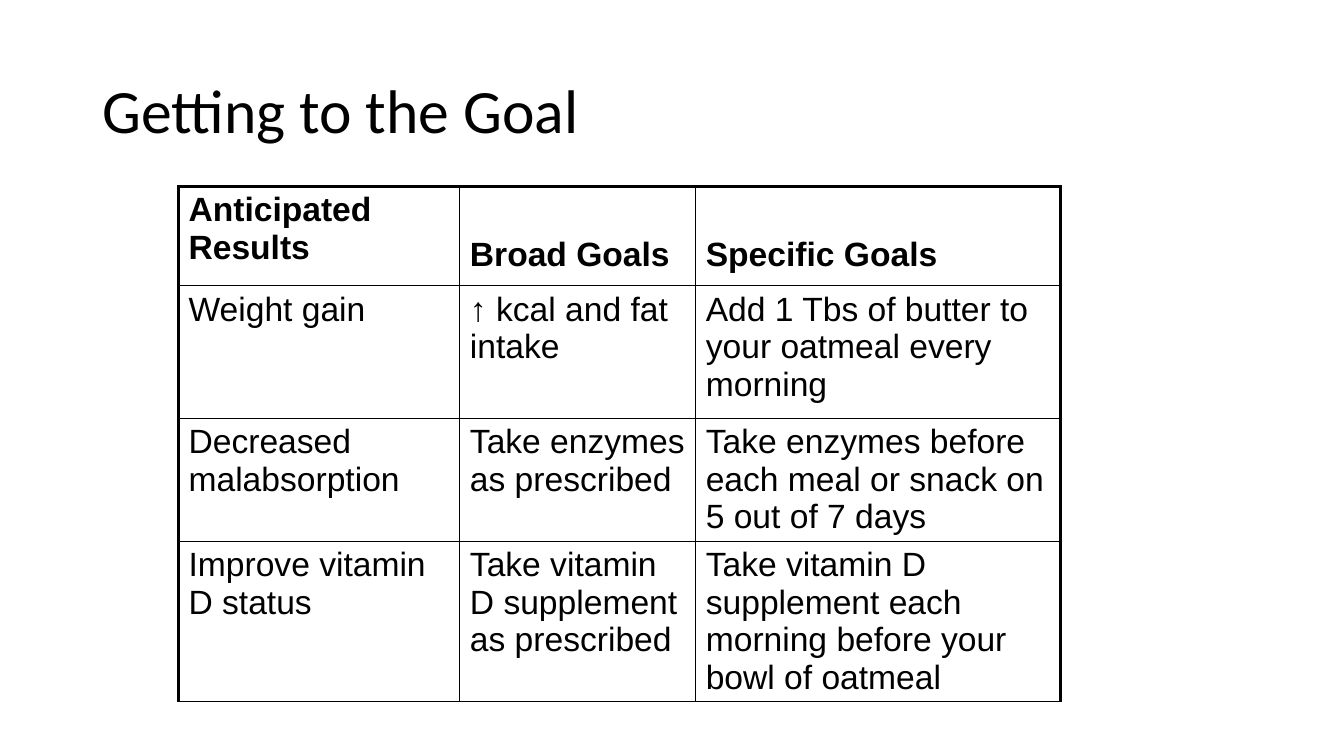
from lxml import etree
from pptx import Presentation
from pptx.dml.color import RGBColor
from pptx.enum.text import MSO_ANCHOR, MSO_AUTO_SIZE, PP_ALIGN
from pptx.oxml.ns import qn
from pptx.util import Pt

TOP, MIDDLE, BOTTOM = MSO_ANCHOR.TOP, MSO_ANCHOR.MIDDLE, MSO_ANCHOR.BOTTOM
LEFT = PP_ALIGN.LEFT
NO_AUTOFIT = MSO_AUTO_SIZE.NONE
TITLE_ONLY = 5

GOALS = [
    ["Anticipated Results", "Broad Goals", "Specific Goals"],
    ["Weight gain", "↑ kcal and fat intake",
     "Add 1 Tbs of butter to your oatmeal every morning"],
    ["Decreased malabsorption", "Take enzymes as prescribed",
     "Take enzymes before each meal or snack on 5 out of 7 days"],
    ["Improve vitamin D status", "Take vitamin D supplement as prescribed",
     "Take vitamin D supplement each morning before your bowl of oatmeal"],
]
COLUMN_WIDTHS = [201, 168.5, 260.5]
ROW_HEIGHTS = [71, 94.5, 88, 114.5]


def color(code):
    return RGBColor.from_string(code)


class GoalSlide:
    ink, paper = "000000", "FFFFFF"
    title_font, table_font = "Calibri", "Arial"
    thin, thick = 1, 2.25

    def __init__(self, slide):
        self.slide = slide

    def add_text(self, frame, text, font, size, bold=False):
        paragraph = frame.paragraphs[0]
        paragraph.alignment = LEFT
        run = paragraph.add_run()
        run.text = text
        run.font.name = font
        run.font.size = Pt(size)
        run.font.bold = bold
        run.font.color.rgb = color(self.ink)
        return paragraph

    def title(self, text, left, top, width, height):
        heading = self.slide.shapes.title
        heading.left, heading.top = Pt(left), Pt(top)
        heading.width, heading.height = Pt(width), Pt(height)
        frame = heading.text_frame
        frame.word_wrap = True
        frame.auto_size = NO_AUTOFIT
        frame.vertical_anchor = MIDDLE
        self.add_text(frame, text, self.title_font, 44).line_spacing = 0.9

    def border(self, cell, side, weight):
        properties = cell._tc.get_or_add_tcPr()
        line = etree.SubElement(properties, qn(f"a:ln{side}"), w=str(Pt(weight)))
        fill = etree.SubElement(line, qn("a:solidFill"))
        etree.SubElement(fill, qn("a:srgbClr"), val=self.ink)

    def table(self, rows, left, top, widths, heights):
        table = self.slide.shapes.add_table(
            len(rows), len(widths), Pt(left), Pt(top),
            Pt(sum(widths)), Pt(sum(heights))).table
        table.first_row = table.horz_banding = False
        for column, width in zip(table.columns, widths):
            column.width = Pt(width)
        for row, height in zip(table.rows, heights):
            row.height = Pt(height)
        for r, texts in enumerate(rows):
            for c, text in enumerate(texts):
                cell = table.cell(r, c)
                outer = {"L": c == 0, "R": c == len(widths) - 1,
                         "T": r == 0, "B": False}
                for side, is_outer in outer.items():
                    self.border(cell, side, self.thick if is_outer else self.thin)
                cell.fill.solid()
                cell.fill.fore_color.rgb = color(self.paper)
                lowered = r == 0 and c > 0
                cell.vertical_anchor = BOTTOM if lowered else TOP
                if lowered:
                    cell.margin_bottom = Pt(8.5)
                self.add_text(cell.text_frame, text, self.table_font, 24, r == 0)


def main():
    deck = Presentation()
    deck.slide_width, deck.slide_height = Pt(960), Pt(540)
    page = GoalSlide(deck.slides.add_slide(deck.slide_layouts[TITLE_ONLY]))
    page.title("Getting to the Goal", 66, 28.8, 828, 104.4)
    page.table(GOALS, 127.5, 133.2, COLUMN_WIDTHS, ROW_HEIGHTS)
    deck.save("out.pptx")


if __name__ == "__main__":
    main()
